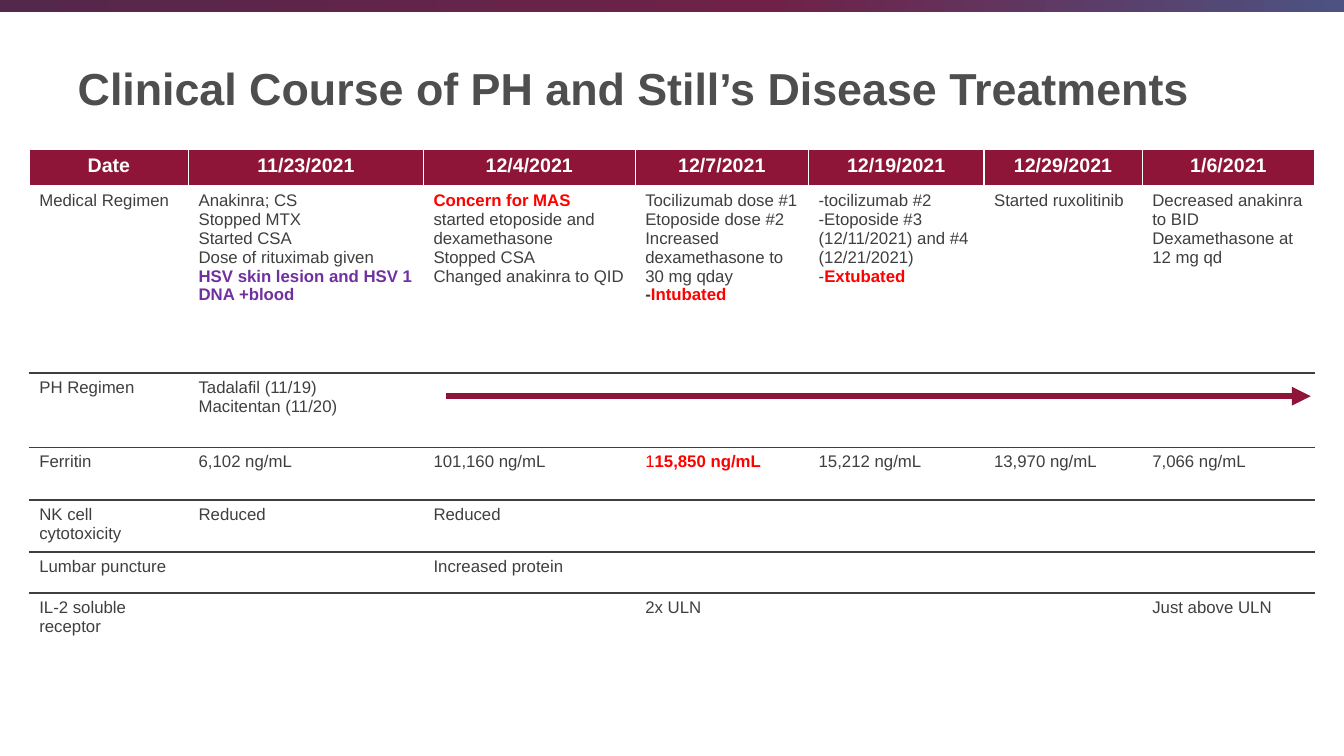
from copy import deepcopy

from lxml import etree
from pptx import Presentation
from pptx.dml.color import RGBColor
from pptx.enum.shapes import MSO_CONNECTOR, MSO_SHAPE
from pptx.enum.text import MSO_ANCHOR, PP_ALIGN
from pptx.oxml.ns import qn
from pptx.util import Inches, Pt

STRAIGHT = MSO_CONNECTOR.STRAIGHT
RECTANGLE = MSO_SHAPE.RECTANGLE
MIDDLE = MSO_ANCHOR.MIDDLE
LEFT, CENTER = PP_ALIGN.LEFT, PP_ALIGN.CENTER

FONT = "Arial"
COLORS = {
    "title": "4D4E4D", "text": "3F3F3F", "white": "FFFFFF", "maroon": "8E1537",
    "purple": "7030A0", "red": "FF0000",
}
BAR_STOPS = [(0, "54284B"), (0.57, "6F2147"), (1, "4D5282")]

SLIDE_WIDTH, SLIDE_HEIGHT = 13.33, 7.5
BAR_BOX = (0, 0, SLIDE_WIDTH, 0.12)
TITLE_BOX = (0.67, 0.22, 11.75, 1.3)
COLUMNS = [1.58, 2.33, 2.1, 1.72, 1.74, 1.57, 1.71]
ROWS = [0.37, 1.85, 0.74, 0.52, 0.52, 0.4, 0.54]
TABLE_BOX = (0.29, 1.48, sum(COLUMNS), sum(ROWS))
PH_ROW, ARROW_COLUMN = 2, 2

DATES = ["Date", "11/23/2021", "12/4/2021", "12/7/2021", "12/19/2021", "12/29/2021", "1/6/2021"]
BODY = [
    [
        ["Medical Regimen"],
        ["Anakinra; CS", "Stopped MTX", "Started CSA", "Dose of rituximab given",
         [("HSV skin lesion and HSV 1 DNA +blood", "purple", True)]],
        [[("Concern for MAS", "red", True)], "started etoposide and dexamethasone",
         "Stopped CSA", "Changed anakinra to QID"],
        ["Tocilizumab dose #1", "Etoposide dose #2", "Increased dexamethasone to 30 mg qday",
         [("-", "text", True), ("Intubated", "red", True)]],
        ["-tocilizumab #2", "-Etoposide #3 (12/11/2021) and #4 (12/21/2021)",
         [("-", "text", False), ("Extubated", "red", True)]],
        ["Started ruxolitinib"],
        ["Decreased anakinra to BID", "Dexamethasone at 12 mg qd"],
    ],
    [["PH Regimen"], ["Tadalafil (11/19)", "Macitentan (11/20)"], [], [], [], [], []],
    [["Ferritin"], ["6,102 ng/mL"], ["101,160 ng/mL"],
     [[("1", "red", False), ("15,850 ng/mL", "red", True)]],
     ["15,212 ng/mL"], ["13,970 ng/mL"], ["7,066 ng/mL"]],
    [["NK cell cytotoxicity"], ["Reduced"], ["Reduced"], [], [], [], []],
    [["Lumbar puncture"], [], ["Increased protein"], [], [], [], []],
    [["IL-2 soluble receptor"], [], [], ["2x ULN"], [], [], ["Just above ULN"]],
]


def color(name):
    """Return the named colour."""
    return RGBColor.from_string(COLORS[name])


def inches(box):
    """Convert a box of plain numbers to lengths."""
    return [Inches(value) for value in box]


def add_run(paragraph, text, size, color_name, bold):
    """Add one formatted run to a paragraph."""
    run = paragraph.add_run()
    run.text = text
    run.font.name = FONT
    run.font.size = Pt(size)
    run.font.bold = bold
    run.font.color.rgb = color(color_name)


def add_bar(slide, box):
    """Draw the gradient band along the top."""
    bar = slide.shapes.add_shape(RECTANGLE, *inches(box))
    bar.shadow.inherit = False
    bar.line.fill.background()
    bar.fill.gradient()
    bar.fill.gradient_angle = 0
    stop_list = bar.element.find(".//" + qn("a:gsLst"))
    stop_list.append(deepcopy(stop_list[-1]))
    for stop, (position, value) in zip(bar.fill.gradient_stops, BAR_STOPS):
        stop.position = position
        stop.color.rgb = RGBColor.from_string(value)


def add_title(slide, box):
    """Place and fill the title placeholder."""
    title = slide.shapes.title
    title.left, title.top, title.width, title.height = inches(box)
    title.text_frame.vertical_anchor = MIDDLE
    paragraph = title.text_frame.paragraphs[0]
    paragraph.alignment = LEFT
    add_run(paragraph, "Clinical Course of PH and Still’s Disease Treatments", 32, "title", True)


def set_borders(cell, top, bottom):
    """Give a cell white sides and the given top and bottom rules."""
    properties = cell._tc.get_or_add_tcPr()
    side = ("white", 1)
    borders = [("a:lnL", side), ("a:lnR", side), ("a:lnT", top), ("a:lnB", bottom)]
    for index, (tag, (color_name, width)) in enumerate(borders):
        line = etree.Element(qn(tag), w=str(Pt(width)))
        fill = etree.SubElement(line, qn("a:solidFill"))
        etree.SubElement(fill, qn("a:srgbClr"), val=COLORS[color_name])
        properties.insert(index, line)


def fill_header(cell, date):
    """Format one header cell."""
    cell.fill.solid()
    cell.fill.fore_color.rgb = color("maroon")
    paragraph = cell.text_frame.paragraphs[0]
    paragraph.alignment = CENTER
    add_run(paragraph, date, 14, "white", True)
    set_borders(cell, ("white", 1), ("white", 3))


def fill_body(cell, entries, is_first, is_last):
    """Write one body cell, a paragraph for each entry."""
    cell.fill.background()
    frame = cell.text_frame
    for index, entry in enumerate(entries):
        paragraph = frame.add_paragraph() if index else frame.paragraphs[0]
        runs = [(entry, "text", False)] if isinstance(entry, str) else entry
        for text, color_name, bold in runs:
            add_run(paragraph, text, 12, color_name, bold)
    rule, blank = ("text", 1.5), ("white", 1)
    set_borders(cell, blank if is_first else rule, blank if is_last else rule)


def add_course_table(slide, box):
    """Build the table of dates, regimens and laboratory values."""
    table = slide.shapes.add_table(len(ROWS), len(COLUMNS), *inches(box)).table
    table.horz_banding = False
    for column, width in zip(table.columns, COLUMNS):
        column.width = Inches(width)
    for row, height in zip(table.rows, ROWS):
        row.height = Inches(height)
    for column, date in enumerate(DATES):
        fill_header(table.cell(0, column), date)
    for row, cells in enumerate(BODY, start=1):
        for column, entries in enumerate(cells):
            fill_body(table.cell(row, column), entries, row == 1, row == len(BODY))


def add_continuation_arrow(slide, box):
    """Draw the arrow that carries the PH regimen across the later dates."""
    left, top, width, _ = box
    start = left + sum(COLUMNS[:ARROW_COLUMN]) + 0.22
    end = left + width - 0.04
    height = top + sum(ROWS[:PH_ROW]) + 0.23
    arrow = slide.shapes.add_connector(STRAIGHT, *inches((start, height, end, height)))
    arrow.line.color.rgb = color("maroon")
    arrow.line.width = Pt(4.5)
    etree.SubElement(arrow.line._get_or_add_ln(), qn("a:tailEnd"), type="triangle")
    etree.SubElement(arrow.element.spPr, qn("a:effectLst"))


def main():
    """Build and save the presentation."""
    presentation = Presentation()
    presentation.slide_width = Inches(SLIDE_WIDTH)
    presentation.slide_height = Inches(SLIDE_HEIGHT)
    slide = presentation.slides.add_slide(presentation.slide_layouts[5])
    add_bar(slide, BAR_BOX)
    add_title(slide, TITLE_BOX)
    add_course_table(slide, TABLE_BOX)
    add_continuation_arrow(slide, TABLE_BOX)
    presentation.save("out.pptx")


if __name__ == "__main__":
    main()
